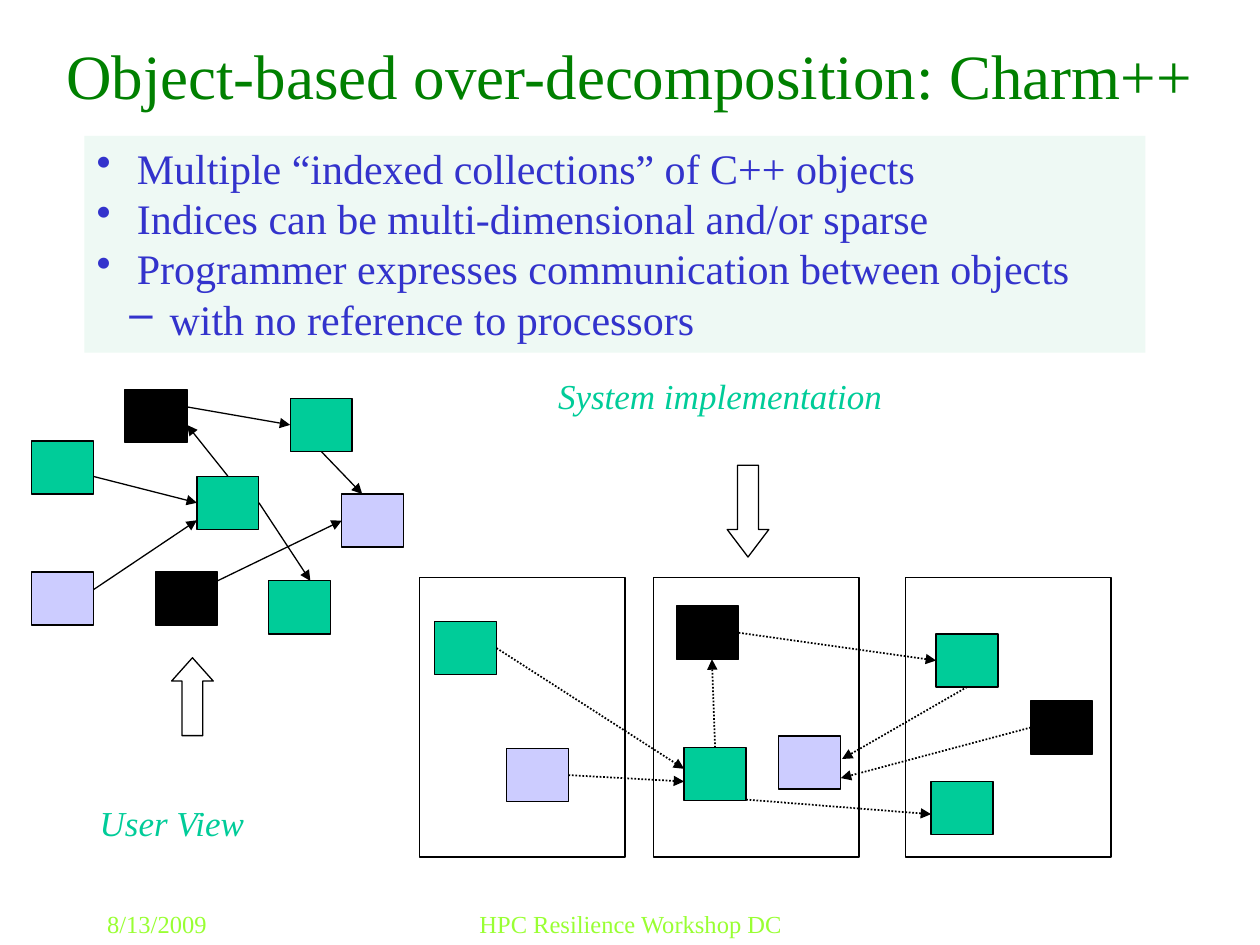
from lxml.etree import SubElement
from pptx import Presentation
from pptx.dml.color import RGBColor
from pptx.enum.dml import MSO_LINE
from pptx.enum.shapes import MSO_CONNECTOR, MSO_SHAPE
from pptx.enum.text import MSO_ANCHOR, PP_ALIGN
from pptx.oxml.ns import qn
from pptx.util import Cm, Pt

GREEN, LAVENDER, BLACK = "00CC99", "CCCCFF", "000000"
OBJECT_WIDTH, OBJECT_HEIGHT = 1.25, 1.07
SIDE_SITES = {(0.5, 0): 0, (0, 0.5): 1, (0.5, 1): 2, (1, 0.5): 3}
TITLE = {"size": Pt(36), "color": "008000"}
FOOTER = {"size": Pt(14), "color": "99FF33"}
LABEL = {"size": Pt(20), "color": GREEN, "italic": True}
BODY = {"size": Pt(24), "color": "3333CC"}


def paint(color_format, color):
    """Set a fill or font colour from a hex string."""
    color_format.rgb = RGBColor.from_string(color)


def write(paragraph, text, style):
    """Add a run whose font takes its values from a style."""
    run = paragraph.add_run()
    run.text = text
    run.font.name = "Times New Roman"
    for name, value in style.items():
        if name == "color":
            paint(run.font.color, value)
        else:
            setattr(run.font, name, value)


def add_text(slide, box, text, style, align=PP_ALIGN.LEFT, anchor=MSO_ANCHOR.TOP):
    """Add a one-line text box."""
    frame = slide.shapes.add_textbox(*map(Cm, box)).text_frame
    frame.word_wrap = True
    frame.vertical_anchor = anchor
    frame.paragraphs[0].alignment = align
    write(frame.paragraphs[0], text, style)


def add_outlined(slide, kind, box, fill=None, line=BLACK):
    """Add a preset shape with an optional fill and outline."""
    shape = slide.shapes.add_shape(kind, *map(Cm, box))
    shape.shadow.inherit = False
    for part, color in ((shape.fill, fill), (shape.line.fill, line)):
        if color:
            part.solid()
            paint(part.fore_color, color)
        else:
            part.background()
    if line:
        shape.line.width = Pt(0.75)
    return shape


def add_block_arrow(slide, kind, box, head):
    """Add an empty block arrow with the given head length."""
    arrow = add_outlined(slide, kind, box)
    arrow.adjustments[0] = 0.5
    arrow.adjustments[1] = head


def add_objects(slide, left, top, objects):
    """Place the coloured objects of a region and return them by name."""
    return {
        name: add_outlined(slide, MSO_SHAPE.RECTANGLE,
                           (left + x, top + y, OBJECT_WIDTH, OBJECT_HEIGHT), color)
        for name, (x, y, color) in objects.items()
    }


def point_on(shape, spot):
    """Return the slide position of a spot given in fractions of a shape."""
    return (int(shape.left + spot[0] * shape.width),
            int(shape.top + spot[1] * shape.height))


def add_messages(slide, objects, messages, width, dash=None):
    """Draw arrows between objects, joined where they meet a side's middle."""
    for source, start, target, end in messages:
        connector = slide.shapes.add_connector(
            MSO_CONNECTOR.STRAIGHT,
            *point_on(objects[source], start), *point_on(objects[target], end))
        if start in SIDE_SITES:
            connector.begin_connect(objects[source], SIDE_SITES[start])
        if end in SIDE_SITES:
            connector.end_connect(objects[target], SIDE_SITES[end])
        paint(connector.line.color, BLACK)
        connector.line.width = Pt(width)
        if dash:
            connector.line.dash_style = dash
        SubElement(connector.line._get_or_add_ln(), qn("a:tailEnd"), type="triangle")
        SubElement(connector._element.spPr, qn("a:effectLst"))


def add_title(slide, box):
    """Place the slide title."""
    add_text(slide, box, "Object-based over-decomposition: Charm++", TITLE,
             PP_ALIGN.CENTER, MSO_ANCHOR.MIDDLE)


def add_footer(slide, left, top):
    """Place the date and the event name."""
    add_text(slide, (left, top, 5.28, 0.84), "8/13/2009", FOOTER)
    add_text(slide, (left + 6.78, top, 8.05, 0.84), "HPC Resilience Workshop DC",
             FOOTER, PP_ALIGN.CENTER)


def add_summary(slide, box):
    """Place the tinted panel with its bulleted points."""
    frame = add_outlined(slide, MSO_SHAPE.RECTANGLE, box, "EEF9F4", None).text_frame
    frame.word_wrap = True
    frame.vertical_anchor = MSO_ANCHOR.TOP
    points = [
        (0, "Multiple “indexed collections” of C++ objects"),
        (0, "Indices can be multi-dimensional and/or sparse"),
        (0, "Programmer expresses communication between objects"),
        (1, "with no reference to processors"),
    ]
    for index, (level, text) in enumerate(points):
        paragraph = frame.add_paragraph() if index else frame.paragraphs[0]
        paragraph.alignment = PP_ALIGN.LEFT
        paragraph.level = level
        paragraph.line_spacing = Pt(28.8)
        properties = paragraph._p.get_or_add_pPr()
        properties.set("marL", str(Cm(0.81 + 0.66 * level)))
        properties.set("indent", str(-Cm(0.81)))
        SubElement(properties, qn("a:buChar"), char="•–"[level])
        write(paragraph, text, BODY)


def add_user_view(slide, left, top):
    """Place the network of objects that the programmer sees."""
    objects = add_objects(slide, left, top, {
        "left": (0, 1.04, GREEN),
        "upper right": (5.21, 0.18, GREEN),
        "lower black": (2.49, 3.68, BLACK),
        "right": (6.25, 2.11, LAVENDER),
        "lower left": (0, 3.68, LAVENDER),
        "center": (3.33, 1.75, GREEN),
        "upper black": (1.88, 0, BLACK),
        "lower right": (4.78, 3.86, GREEN),
    })
    add_messages(slide, objects, [
        ("left", (1, 0.67), "center", (0, 0.5)),
        ("lower left", (1, 0.33), "center", (0, 0.83)),
        ("lower black", (1, 0.17), "right", (0, 0.5)),
        ("center", (0.5, 0), "upper black", (1, 0.67)),
        ("upper black", (1, 0.33), "upper right", (0, 0.5)),
        ("center", (1, 0.5), "lower right", (0.67, 0)),
        ("upper right", (0.5, 1), "right", (0.33, 0)),
    ], 0.75)
    add_text(slide, (left + 1.12, top + 8.18, 6.73, 1.83), "User View", LABEL)
    add_block_arrow(slide, MSO_SHAPE.UP_ARROW,
                    (left + 2.82, top + 5.41, 0.84, 1.57), 0.56)


def add_system_view(slide, left, top):
    """Place the processors with the objects mapped onto them."""
    add_text(slide, (left + 2.54, top, 13.61, 1.8), "System implementation", LABEL)
    add_block_arrow(slide, MSO_SHAPE.DOWN_ARROW,
                    (left + 6.2, top + 1.96, 0.84, 1.85), 0.66)
    for x in (0, 4.72, 9.8):
        add_outlined(slide, MSO_SHAPE.RECTANGLE, (left + x, top + 4.22, 4.14, 5.64))
    objects = add_objects(slide, left, top, {
        "center lavender": (7.24, 7.42, LAVENDER),
        "lower right": (10.31, 8.33, GREEN),
        "center": (5.33, 7.65, GREEN),
        "left lavender": (1.75, 7.67, LAVENDER),
        "center black": (5.18, 4.8, BLACK),
        "left": (0.3, 5.11, GREEN),
        "right black": (12.32, 6.71, BLACK),
        "upper right": (10.41, 5.36, GREEN),
    })
    add_messages(slide, objects, [
        ("left", (1, 0.5), "center", (0, 0.4)),
        ("left lavender", (1, 0.5), "center", (0, 0.64)),
        ("center black", (1, 0.5), "upper right", (0, 0.5)),
        ("upper right", (0.5, 1), "center lavender", (1.02, 0.43)),
        ("right black", (0, 0.5), "center lavender", (1, 0.79)),
        ("center", (0.5, 0), "center black", (0.57, 1)),
        ("center", (1, 0.98), "lower right", (0, 0.62)),
    ], 1, MSO_LINE.ROUND_DOT)


def main():
    """Build and save the slide."""
    presentation = Presentation()
    presentation.slide_width = Cm(25.4)
    presentation.slide_height = Cm(19.05)
    slide = presentation.slides.add_slide(presentation.slide_layouts[6])
    add_title(slide, (0.84, 0.64, 23.7, 1.7))
    add_footer(slide, 1.91, 18.21)
    add_user_view(slide, 0.64, 7.85)
    add_system_view(slide, 8.46, 7.42)
    add_summary(slide, (1.7, 2.74, 21.39, 4.37))
    presentation.save("out.pptx")


if __name__ == "__main__":
    main()
